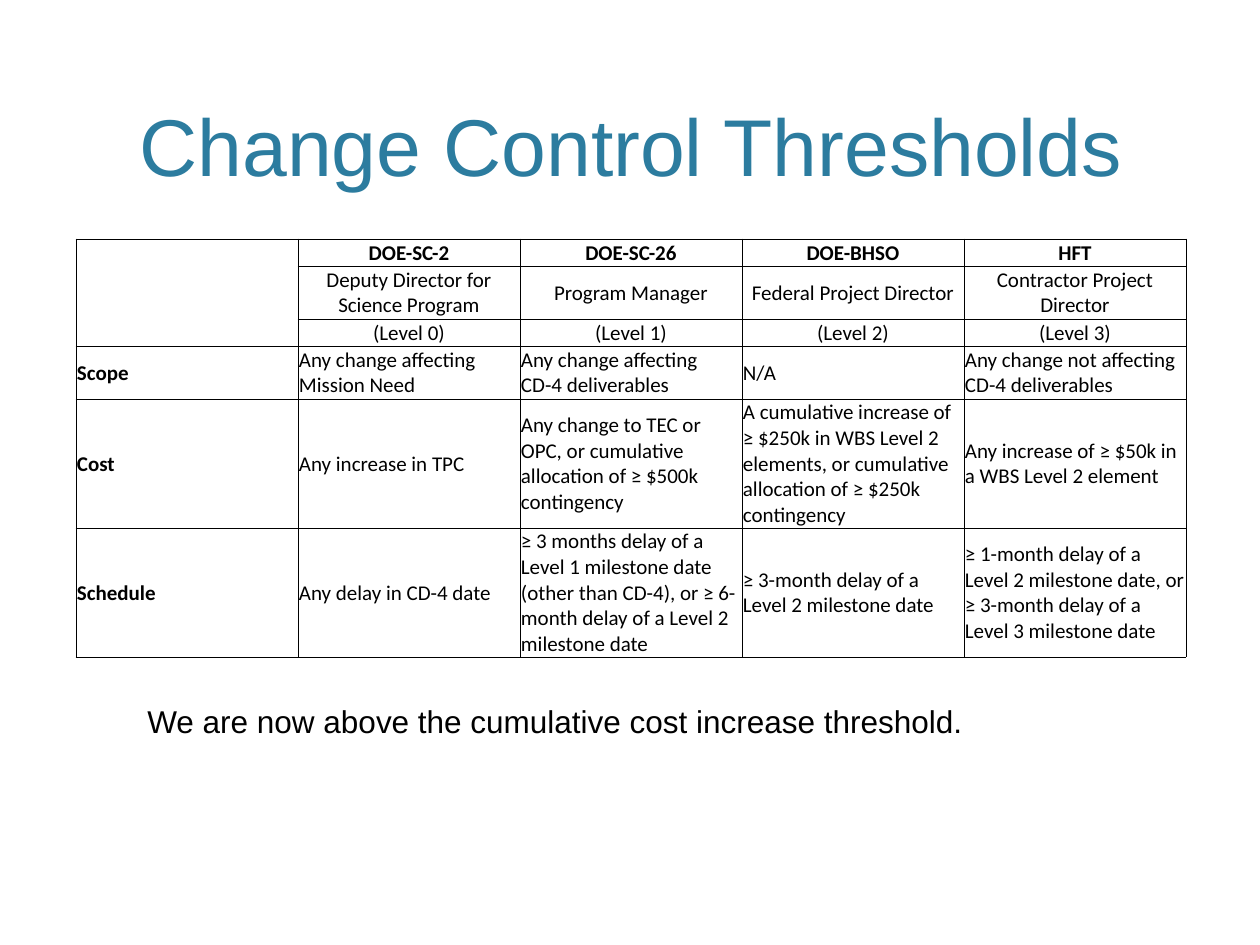
from dataclasses import dataclass

from lxml import etree
from pptx import Presentation
from pptx import util as u
from pptx.dml.color import RGBColor
from pptx.enum import text
from pptx.oxml import ns

PX = 914400 / 126


@dataclass(frozen=True)
class Theme:
    title: str = "2C7C9F"
    ink: str = "000000"
    paper: str = "FFFFFF"
    heading_font: str = "Arial"
    table_font: str = "Calibri"
    title_size: int = 46
    note_size: int = 18
    cell_size: int = 12
    border_width: float = 0.5


@dataclass(frozen=True)
class Box:
    left: int
    top: int
    width: int
    height: int

    def emu(self) -> tuple:
        return tuple(px(n) for n in (self.left, self.top, self.width, self.height))


@dataclass(frozen=True)
class Row:
    height: int
    cells: tuple
    heading: bool = False
    bold: bool = False


THEME = Theme()
PAGE = Box(0, 0, 1260, 945)
TITLE = Box(76, 15, 1109, 184)
TABLE = Box(76, 239, 1110, 418)
NOTE = Box(135, 696, 925, 50)

ROWS = (
    Row(27, ("", "DOE-SC-2", "DOE-SC-26", "DOE-BHSO", "HFT"), heading=True, bold=True),
    Row(53, ("", "Deputy Director for Science Program", "Program Manager",
             "Federal Project Director", "Contractor Project Director"), heading=True),
    Row(27, ("", "(Level 0)", "(Level 1)", "(Level 2)", "(Level 3)"), heading=True),
    Row(53, ("Scope", "Any change affecting Mission Need",
             "Any change affecting CD-4 deliverables", "N/A",
             "Any change not affecting CD-4 deliverables")),
    Row(129, ("Cost", "Any increase in TPC",
              "Any change to TEC or OPC, or cumulative allocation of ≥ $500k contingency",
              "A cumulative increase of ≥ $250k in WBS Level 2 elements, "
              "or cumulative allocation of ≥ $250k contingency",
              "Any increase of ≥ $50k in a WBS Level 2 element")),
    Row(129, ("Schedule", "Any delay in CD-4 date",
              "≥ 3 months delay of a Level 1 milestone date (other than CD-4), "
              "or ≥ 6-month delay of a Level 2 milestone date",
              "≥ 3-month delay of a Level 2 milestone date",
              "≥ 1-month delay of a Level 2 milestone date, "
              "or ≥ 3-month delay of a Level 3 milestone date")),
)


def px(count: int) -> int:
    return round(count * PX)


def write(frame, words: str, font: str, size: int, color: str,
          align=text.PP_ALIGN.LEFT, bold: bool = False) -> None:
    frame.text = words
    para = frame.paragraphs[0]
    para.alignment = align
    for style in [para.font] + [span.font for span in para.runs]:
        style.name = font
        style.size = u.Pt(size)
        style.bold = bold
        style.color.rgb = RGBColor.from_string(color)


def add_borders(cell) -> None:
    """Line all four sides; the lines must precede the fill in the XML."""
    properties = cell._tc.get_or_add_tcPr()
    for position, side in enumerate(("lnL", "lnR", "lnT", "lnB")):
        line = etree.Element(ns.qn(f"a:{side}"), w=str(u.Pt(THEME.border_width)))
        fill = etree.SubElement(line, ns.qn("a:solidFill"))
        etree.SubElement(fill, ns.qn("a:srgbClr"), val=THEME.ink)
        properties.insert(position, line)


def format_cell(cell, words: str, row: Row, bold: bool, anchor) -> None:
    cell.margin_left = cell.margin_right = cell.margin_top = px(1)
    cell.margin_bottom = 0
    cell.vertical_anchor = anchor
    align = text.PP_ALIGN.CENTER if row.heading else text.PP_ALIGN.LEFT
    write(cell.text_frame, words, THEME.table_font, THEME.cell_size, THEME.ink, align, bold)
    cell.fill.solid()
    cell.fill.fore_color.rgb = RGBColor.from_string(THEME.paper)
    add_borders(cell)


def add_title(page) -> None:
    title = page.shapes.title
    title.left, title.top, title.width, title.height = TITLE.emu()
    frame = title.text_frame
    frame.auto_size = text.MSO_AUTO_SIZE.NONE
    frame.vertical_anchor = text.MSO_ANCHOR.BOTTOM
    write(frame, "Change Control Thresholds", THEME.heading_font, THEME.title_size,
          THEME.title, text.PP_ALIGN.CENTER)


def add_thresholds(page) -> None:
    columns = len(ROWS[0].cells)
    table = page.shapes.add_table(len(ROWS), columns, *TABLE.emu()).table
    table.first_row = table.horz_banding = False
    for column in table.columns:
        column.width = px(TABLE.width // columns)
    for r, row in enumerate(ROWS):
        table.rows[r].height = px(row.height)
        anchor = text.MSO_ANCHOR.BOTTOM if r == 0 else text.MSO_ANCHOR.MIDDLE
        for c, words in enumerate(row.cells):
            bold = row.bold or c == 0
            format_cell(table.cell(r, c), words, row, bold, anchor)
    heading_rows = sum(row.heading for row in ROWS)
    table.cell(0, 0).merge(table.cell(heading_rows - 1, 0))


def add_note(page) -> None:
    box = page.shapes.add_textbox(*NOTE.emu())
    frame = box.text_frame
    frame.word_wrap = False
    frame.auto_size = text.MSO_AUTO_SIZE.SHAPE_TO_FIT_TEXT
    write(frame, "We are now above the cumulative cost increase threshold.",
          THEME.heading_font, THEME.note_size, THEME.ink)


def main() -> None:
    deck = Presentation()
    deck.slide_width, deck.slide_height = px(PAGE.width), px(PAGE.height)
    page = deck.slides.add_slide(deck.slide_layouts.get_by_name("Title Only"))
    add_title(page)
    add_thresholds(page)
    add_note(page)
    deck.save("out.pptx")


if __name__ == "__main__":
    main()
